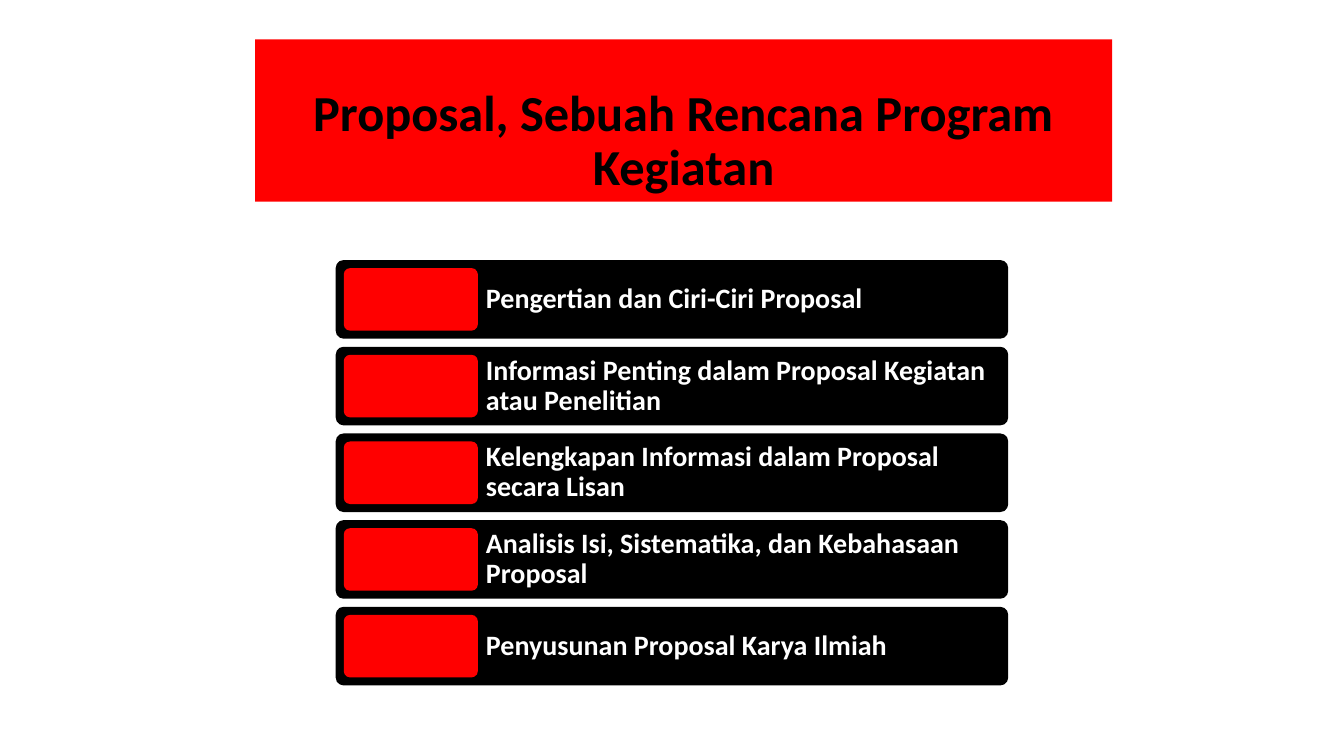
from dataclasses import dataclass

from pptx import Presentation
from pptx.dml.color import RGBColor
from pptx.enum.shapes import MSO_SHAPE
from pptx.enum.text import MSO_ANCHOR, MSO_AUTO_SIZE, PP_ALIGN
from pptx.shapes.group import GroupShape
from pptx.slide import Slide
from pptx.text.text import TextFrame
from pptx.util import Inches, Pt

ROUNDED_RECTANGLE = MSO_SHAPE.ROUNDED_RECTANGLE
BOTTOM, MIDDLE = MSO_ANCHOR.BOTTOM, MSO_ANCHOR.MIDDLE
NO_AUTOFIT = MSO_AUTO_SIZE.NONE
CENTER, LEFT = PP_ALIGN.CENTER, PP_ALIGN.LEFT
TITLE_ONLY_LAYOUT = 5


@dataclass(frozen=True)
class Theme:
    font: str = "Calibri"
    title_size: int = 36
    topic_size: int = 20
    line_spacing: float = 0.9
    corner: float = 0.1
    red: RGBColor = RGBColor(0xFF, 0x00, 0x00)
    black: RGBColor = RGBColor(0x00, 0x00, 0x00)
    white: RGBColor = RGBColor(0xFF, 0xFF, 0xFF)


@dataclass(frozen=True)
class Box:
    """A rectangle measured in inches."""
    left: float
    top: float
    width: float
    height: float

    def lengths(self) -> tuple[int, int, int, int]:
        return (Inches(self.left), Inches(self.top),
                Inches(self.width), Inches(self.height))


@dataclass(frozen=True)
class Topic:
    text: str
    top: float


THEME = Theme()
TITLE = "Proposal, Sebuah Rencana Program Kegiatan"
TITLE_BOX = Box(2.53, 0.39, 8.5, 1.61)
FIRST_TOP, ROW_PITCH = 2.58, 0.86
BAR_LEFT, BAR_WIDTH, BAR_HEIGHT = 3.33, 6.67, 0.78
PADDING = 0.08
TILE_WIDTH = 1.33
TOPIC_TEXTS = (
    "Pengertian dan Ciri-Ciri Proposal",
    "Informasi Penting dalam Proposal Kegiatan atau Penelitian",
    "Kelengkapan Informasi dalam Proposal secara Lisan",
    "Analisis Isi, Sistematika, dan Kebahasaan Proposal",
    "Penyusunan Proposal Karya Ilmiah",
)
TOPICS = [Topic(text, FIRST_TOP + index * ROW_PITCH)
          for index, text in enumerate(TOPIC_TEXTS)]


def write_text(frame: TextFrame, text: str, size: int, color: RGBColor,
               alignment: PP_ALIGN, anchor: MSO_ANCHOR) -> None:
    frame.text = text
    frame.word_wrap = True
    frame.auto_size = NO_AUTOFIT
    frame.vertical_anchor = anchor
    paragraph = frame.paragraphs[0]
    paragraph.alignment = alignment
    paragraph.line_spacing = THEME.line_spacing
    paragraph.space_before = Pt(0)
    paragraph.font.name = THEME.font
    paragraph.font.size = Pt(size)
    paragraph.font.bold = True
    paragraph.font.color.rgb = color


def add_title(slide: Slide) -> None:
    title = slide.shapes.title
    title.left, title.top, title.width, title.height = TITLE_BOX.lengths()
    title.fill.solid()
    title.fill.fore_color.rgb = THEME.red
    write_text(title.text_frame, TITLE, THEME.title_size, THEME.black,
               CENTER, BOTTOM)


def add_rounded_box(group: GroupShape, box: Box, color: RGBColor) -> None:
    shape = group.shapes.add_shape(ROUNDED_RECTANGLE, *box.lengths())
    shape.adjustments[0] = THEME.corner
    shape.shadow.inherit = False
    shape.fill.solid()
    shape.fill.fore_color.rgb = color
    shape.line.fill.background()


def add_topic(group: GroupShape, topic: Topic) -> None:
    """Draw a black bar with its text and the red tile at its left."""
    bar = Box(BAR_LEFT, topic.top, BAR_WIDTH, BAR_HEIGHT)
    tile = Box(BAR_LEFT + PADDING, topic.top + PADDING,
               TILE_WIDTH, BAR_HEIGHT - 2 * PADDING)
    text_left = tile.left + tile.width
    label = Box(text_left, topic.top, bar.left + bar.width - text_left, BAR_HEIGHT)

    add_rounded_box(group, bar, THEME.black)
    frame = group.shapes.add_textbox(*label.lengths()).text_frame
    frame.margin_left = frame.margin_right = Inches(PADDING)
    frame.margin_top = frame.margin_bottom = Inches(PADDING)
    write_text(frame, topic.text, THEME.topic_size, THEME.white, LEFT, MIDDLE)
    add_rounded_box(group, tile, THEME.red)


def main() -> None:
    presentation = Presentation()
    presentation.slide_width = Inches(13.33)
    presentation.slide_height = Inches(7.5)
    layout = presentation.slide_layouts[TITLE_ONLY_LAYOUT]
    slide = presentation.slides.add_slide(layout)
    add_title(slide)
    topic_list = slide.shapes.add_group_shape()
    for topic in TOPICS:
        add_topic(topic_list, topic)
    presentation.save("out.pptx")


if __name__ == "__main__":
    main()
